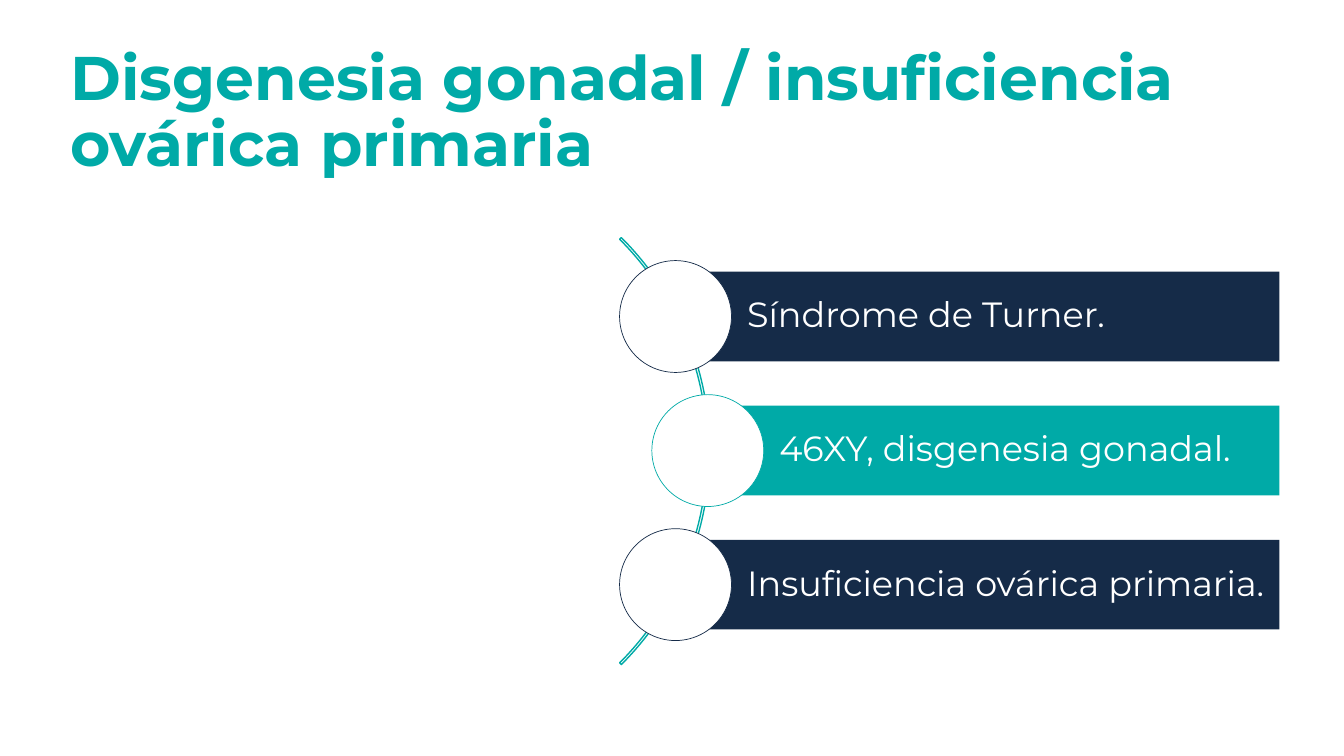
import pptx
import pptx.util
from pptx.dml.color import RGBColor
from pptx.enum.shapes import MSO_SHAPE
from pptx.enum.text import MSO_ANCHOR, PP_ALIGN
from pptx.util import Inches

TEAL = RGBColor(0x00, 0xAA, 0xA7)
NAVY = RGBColor(0x15, 0x2B, 0x48)
WHITE = RGBColor(0xFF, 0xFF, 0xFF)


class SlideBuilder:
    """Draws the elements of one slide in a shared style."""

    font_name = "Montserrat"

    def __init__(self, slide):
        self.slide = slide

    def label(self, shape, text, size, color, bold=False):
        frame = shape.text_frame
        frame.word_wrap = True
        frame.vertical_anchor = MSO_ANCHOR.MIDDLE
        paragraph = frame.paragraphs[0]
        paragraph.text = text
        paragraph.alignment = PP_ALIGN.LEFT
        paragraph.line_spacing = 0.9
        paragraph.font.name = self.font_name
        paragraph.font.size = pptx.util.Pt(size)
        paragraph.font.bold = bold
        paragraph.font.color.rgb = color
        return frame

    def title(self, text, left, top, width, height):
        heading = self.slide.shapes.add_textbox(
            Inches(left), Inches(top), Inches(width), Inches(height))
        self.label(heading, text, 44, TEAL, bold=True)

    def shape(self, kind, left, top, width, height, fill=None, line=None, line_width=1):
        shape = self.slide.shapes.add_shape(
            kind, Inches(left), Inches(top), Inches(width), Inches(height))
        shape.shadow.inherit = False
        if fill is None:
            shape.fill.background()
        else:
            shape.fill.solid()
            shape.fill.fore_color.rgb = fill
        if line is None:
            shape.line.fill.background()
        else:
            shape.line.color.rgb = line
            shape.line.width = pptx.util.Pt(line_width)
        return shape

    def arc(self, left, top, diameter):
        arc = self.shape(MSO_SHAPE.BLOCK_ARC, left, top, diameter, diameter, line=TEAL)
        for index, value in enumerate((189, 27, 0.004)):
            arc.adjustments[index] = value

    def cause(self, text, left, center, right, color):
        bar_height, circle_size = 0.89, 1.11
        bar = self.shape(MSO_SHAPE.RECTANGLE, left, center - bar_height / 2,
                         right - left, bar_height, fill=color)
        frame = self.label(bar, text, 25, WHITE)
        frame.margin_left = Inches(0.71)
        frame.margin_top = frame.margin_right = frame.margin_bottom = Inches(0.07)
        self.shape(MSO_SHAPE.OVAL, left - circle_size / 2, center - circle_size / 2,
                   circle_size, circle_size, fill=WHITE, line=color, line_width=0.5)


def main():
    deck = pptx.Presentation()
    deck.slide_width = Inches(13.33)
    deck.slide_height = Inches(7.5)
    builder = SlideBuilder(deck.slides.add_slide(deck.slide_layouts[6]))

    builder.title("Disgenesia gonadal / insuficiencia ovárica primaria",
                  0.6, 0.4, 11.81, 1.45)
    builder.arc(1.05, 1.48, 5.99)

    causes = [
        ("Síndrome de Turner.", 6.7, NAVY),
        ("46XY, disgenesia gonadal.", 7.02, TEAL),
        ("Insuficiencia ovárica primaria.", 6.7, NAVY),
    ]
    for row, (text, left, color) in enumerate(causes):
        builder.cause(text, left, 3.14 + row * 1.33, 12.69, color)

    deck.save("out.pptx")


if __name__ == "__main__":
    main()
